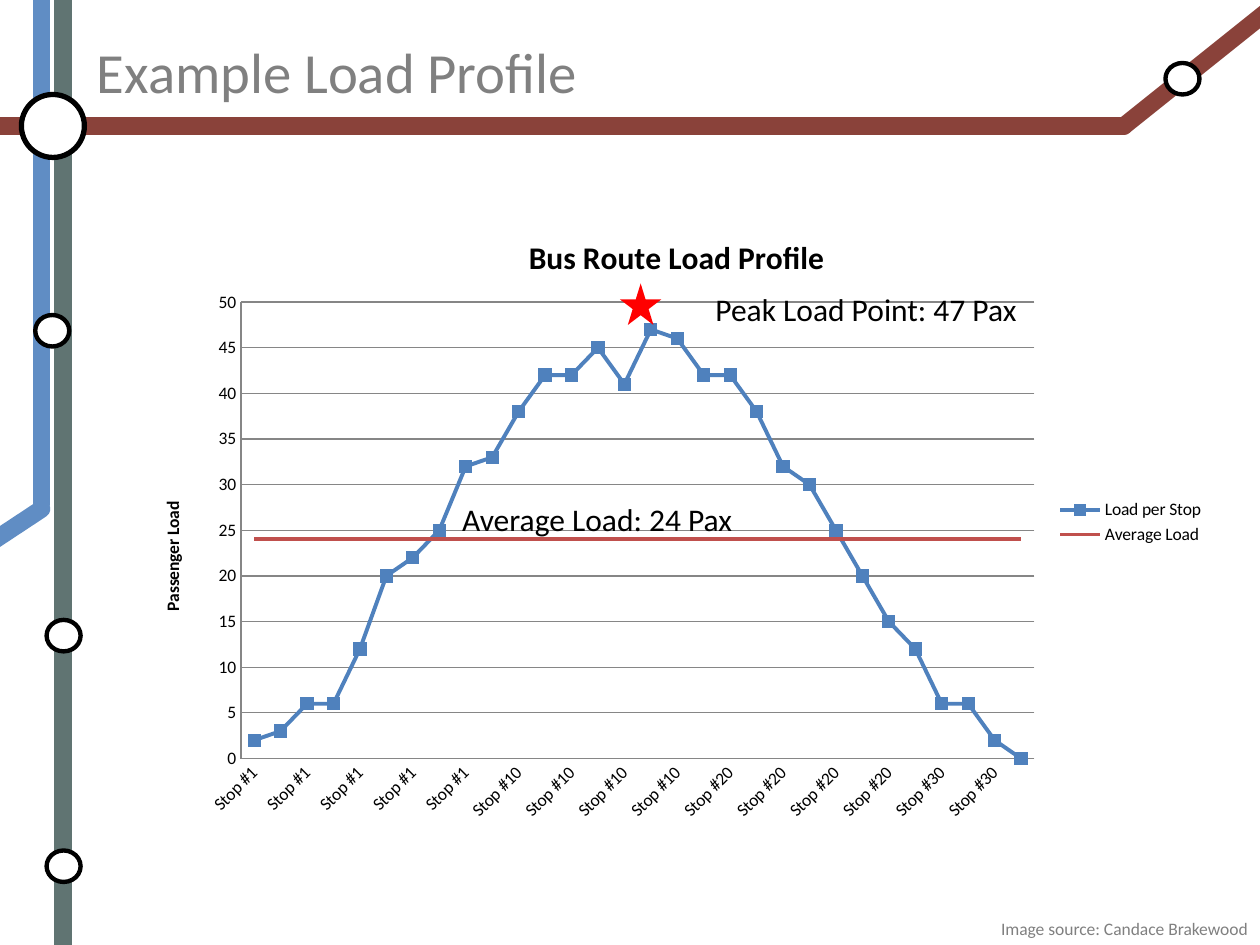
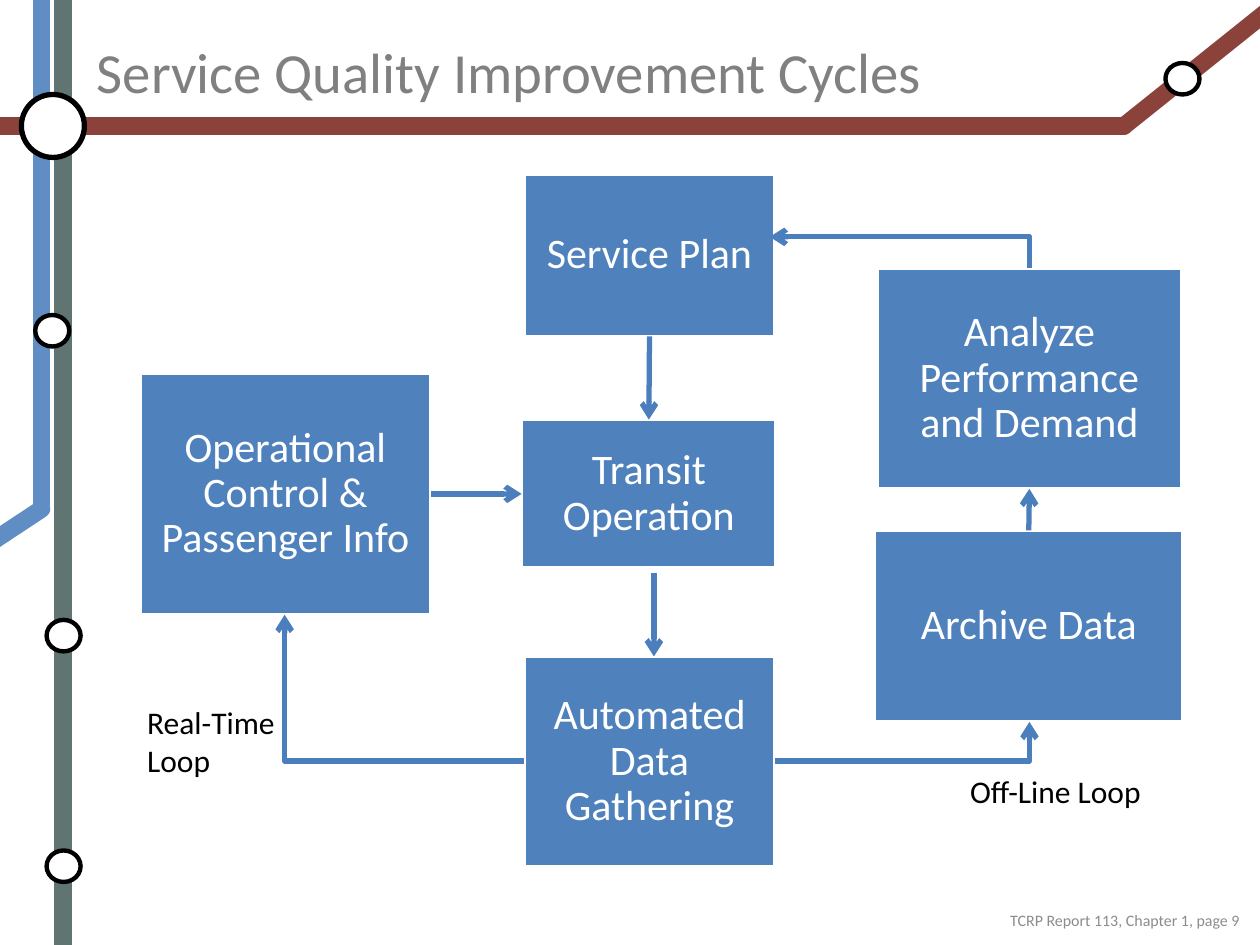
"""Build two transit slides: a bus load profile and a service quality cycle."""
import pptx
import pptx.chart.data
import pptx.dml.color
import pptx.enum.chart
import pptx.enum.shapes
import pptx.enum.text
import pptx.oxml
import pptx.oxml.ns
import pptx.util
from lxml import etree

Inches, Pt, qn = pptx.util.Inches, pptx.util.Pt, pptx.oxml.ns.qn
SHAPE = pptx.enum.shapes.MSO_SHAPE
LINK = pptx.enum.shapes.MSO_CONNECTOR
ALIGN = pptx.enum.text.PP_ALIGN
ANCHOR = pptx.enum.text.MSO_ANCHOR
XL = pptx.enum.chart

FONT = "Calibri"
HUES = {
    "green": "607472", "blue": "608DC4", "brown": "8A423A",
    "white": "FFFFFF", "black": "000000", "title": "808080",
    "note": "8C8C8C", "box": "4F81BD", "wire": "4B7EBC",
    "mean": "C0504D", "star": "FF0000", "grid": "868686",
}

TRACKS = [
    ("green", (0.5, 7.5), (0.5, 0)),
    ("blue", (0.33, 4), (0.33, 0)),
    ("blue", (0.33, 4.04), (-0.17, 4.37)),
    ("brown", (0, 1), (8.92, 1)),
    ("brown", (10.17, 0), (8.92, 1)),
]
HUB = (0.17, 0.75, 0.5, 0.5)
STOPS = [(0.37, 4.92), (0.37, 6.75), (0.28, 2.5), (9.25, 0.5)]

LOADS = [2, 3, 6, 6, 12, 20, 22, 25, 32, 33, 38, 42, 42, 45, 41,
         47, 46, 42, 42, 38, 32, 30, 25, 20, 15, 12, 6, 6, 2, 0]
MEAN = 24
GROUPS = [("Stop #1", 9), ("Stop #10", 8), ("Stop #20", 9), ("Stop #30", 4)]
CHART = (1.08, 1.67, 8.58, 4.95)
PLOT = {"x": 0.097, "y": 0.147, "w": 0.734, "h": 0.732}
CALLS = [
    ("Peak Load Point: 47 Pax", (5.58, 2.25, 3.33, 0.4)),
    ("Average Load: 24 Pax", (3.57, 3.92, 2.7, 0.4)),
]

BOXES = {
    "store": ("Archive Data", (6.94, 4.21, 2.45, 1.52)),
    "study": ("Analyze Performance and Demand", (6.96, 2.13, 2.42, 1.75)),
    "plan": ("Service Plan", (4.16, 1.38, 1.99, 1.29)),
    "run": ("Transit Operation", (4.14, 3.33, 2.02, 1.18)),
    "gather": ("Automated Data Gathering", (4.16, 5.21, 1.99, 1.67)),
    "control": ("Operational Control & Passenger Info", (1.11, 2.96, 2.31, 1.92)),
}
JOINS = [("plan", 2, "run", 0), ("store", 0, "study", 2), ("control", 3, "run", 1)]
BENDS = [
    ((6.11, 1.88), (8.17, 2.13), "headEnd"),
    ((4.16, 6.04), (2.26, 4.88), "tailEnd"),
    ((6.15, 6.04), (8.17, 5.73), "tailEnd"),
]
DROP = ((5.19, 4.55), (5.19, 5.21))
LOOPS = [
    ("Real-Time Loop", (1.07, 5.53, 1.23, 0.71)),
    ("Off-Line Loop", (7.6, 6.08, 1.69, 0.4)),
]


def hue(name):
    return pptx.dml.color.RGBColor.from_string(HUES[name])


def paint(part, name):
    part.fill.solid()
    part.fill.fore_color.rgb = hue(name)


def style(font, size, color="black", bold=False):
    font.name, font.size, font.bold = FONT, Pt(size), bold
    font.color.rgb = hue(color)


def form(slide, kind, place, fill, edge=None, width=0):
    item = slide.shapes.add_shape(kind, *map(Inches, place))
    item.shadow.inherit = False
    paint(item, fill)
    if edge:
        item.line.color.rgb, item.line.width = hue(edge), Pt(width)
    else:
        item.line.fill.background()
    return item


def write(slide, text, place, size=18, color="black", align=ALIGN.LEFT,
          anchor=ANCHOR.TOP, lead=None, pad=None, host=None):
    item = host or slide.shapes.add_textbox(*map(Inches, place))
    frame = item.text_frame
    frame.word_wrap, frame.vertical_anchor = True, anchor
    if pad is not None:
        frame.margin_left = frame.margin_right = Inches(pad)
        frame.margin_top = frame.margin_bottom = Inches(pad)
    para = frame.paragraphs[0]
    para.alignment = align
    if lead:
        para.line_spacing = lead
    run = para.add_run()
    run.text = text
    style(run.font, size, color)


def wire(slide, start, end, color="wire", width=3, tip=None, kind=LINK.STRAIGHT):
    item = slide.shapes.add_connector(kind, *map(Inches, (*start, *end)))
    item.line.color.rgb, item.line.width = hue(color), Pt(width)
    props = item._element.spPr
    line = props.find(qn("a:ln"))
    if tip:
        etree.SubElement(line, qn("a:" + tip), type="arrow")
    else:
        line.set("cap", "rnd")
    etree.SubElement(props, qn("a:effectLst"))
    if kind == LINK.ELBOW:
        props.find(qn("a:prstGeom")).set("prst", "bentConnector2")
    return item


def base(deck, title):
    slide = deck.slides.add_slide(deck.slide_layouts[6])
    for color, start, end in TRACKS:
        wire(slide, start, end, color, 10)
    form(slide, SHAPE.OVAL, HUB, "white", "black", 3)
    for spot in STOPS:
        form(slide, SHAPE.OVAL, (*spot, 0.27, 0.25), "white", "black", 2.5)
    write(slide, title, (0.67, 0.3, 8.25, 0.53), size=32.4, color="title",
          anchor=ANCHOR.MIDDLE)
    return slide


def label(owner, text, size):
    frame = owner.text_frame
    frame.text = text
    style(frame.paragraphs[0].runs[0].font, size, bold=True)


def graph(slide):
    data = pptx.chart.data.CategoryChartData()
    data.categories = [name for name, count in GROUPS for _ in range(count)]
    data.add_series("Load per Stop", LOADS)
    data.add_series("Average Load", [MEAN] * len(LOADS))
    chart = slide.shapes.add_chart(
        XL.XL_CHART_TYPE.LINE_MARKERS, *map(Inches, CHART), data).chart
    style(chart.font, 10)
    chart.has_title = True
    label(chart.chart_title, "Bus Route Load Profile", 18)
    chart.has_legend = True
    chart.legend.position = XL.XL_LEGEND_POSITION.RIGHT
    chart.legend.include_in_layout = False
    plot = chart.plots[0]
    plot.vary_by_categories = False
    for series, color in zip(plot.series, ("box", "mean")):
        series.smooth = False
        series.format.line.color.rgb = hue(color)
        series.format.line.width = Pt(2.25)
        series.marker.style = XL.XL_MARKER_STYLE.NONE
    mark = plot.series[0].marker
    mark.style, mark.size = XL.XL_MARKER_STYLE.SQUARE, 7
    paint(mark.format, "box")
    mark.format.line.color.rgb = hue("box")

    stops, loads = chart.category_axis, chart.value_axis
    for axis in (stops, loads):
        axis.major_tick_mark = axis.minor_tick_mark = XL.XL_TICK_MARK.NONE
        axis.format.line.color.rgb = hue("grid")
        style(axis.tick_labels.font, 10)
    loads.minimum_scale, loads.maximum_scale, loads.major_unit = 0, 50, 5
    loads.has_major_gridlines = True
    loads.major_gridlines.format.line.color.rgb = hue("grid")
    loads.has_title = True
    label(loads.axis_title, "Passenger Load", 10)

    node = stops._element
    node.find(qn("c:txPr")).find(qn("a:bodyPr")).set("rot", "-2700000")
    skip = etree.Element(qn("c:tickLblSkip"), val="2")
    node.find(qn("c:noMultiLvlLbl")).addprevious(skip)
    area = chart._chartSpace.chart.plotArea
    for old in area.findall(qn("c:layout")):
        area.remove(old)
    layout = etree.Element(qn("c:layout"))
    area.insert(0, layout)
    manual = etree.SubElement(layout, qn("c:manualLayout"))
    rules = {"layoutTarget": "inner", "xMode": "edge", "yMode": "edge", **PLOT}
    for key, value in rules.items():
        etree.SubElement(manual, qn("c:" + key), val=str(value))


def profile(deck):
    slide = base(deck, "Example Load Profile")
    graph(slide)
    form(slide, SHAPE.STAR_5_POINT, (4.92, 2.25, 0.33, 0.33), "star")
    for text, place in CALLS:
        write(slide, text, place)
    write(slide, "Image source: Candace Brakewood", (4.75, 7.24, 5.25, 0.27),
          size=10, color="title", align=ALIGN.RIGHT)


def cycle(deck):
    slide = base(deck, "Service Quality Improvement Cycles")
    boxes = {}
    for key, (text, place) in BOXES.items():
        boxes[key] = form(slide, SHAPE.RECTANGLE, place, "box", "white", 2)
        write(slide, text, place, size=24, color="white", align=ALIGN.CENTER,
              anchor=ANCHOR.MIDDLE, lead=0.9, pad=0.1, host=boxes[key])
    for first, side, last, face in JOINS:
        link = wire(slide, (0, 0), (1, 1), tip="tailEnd")
        link.begin_connect(boxes[first], side)
        link.end_connect(boxes[last], face)
    for start, end, tip in BENDS:
        wire(slide, start, end, tip=tip, kind=LINK.ELBOW)
    wire(slide, *DROP, tip="tailEnd")
    for text, place in LOOPS:
        write(slide, text, place)
    write(slide, "TCRP Report 113, Chapter 1, page 9", (6.94, 7.21, 3, 0.25),
          size=9.1, color="note", align=ALIGN.RIGHT, lead=0.8)


def main():
    deck = pptx.Presentation()
    deck.slide_width, deck.slide_height = Inches(10), Inches(7.5)
    profile(deck)
    cycle(deck)
    deck.save("out.pptx")


if __name__ == "__main__":
    main()
